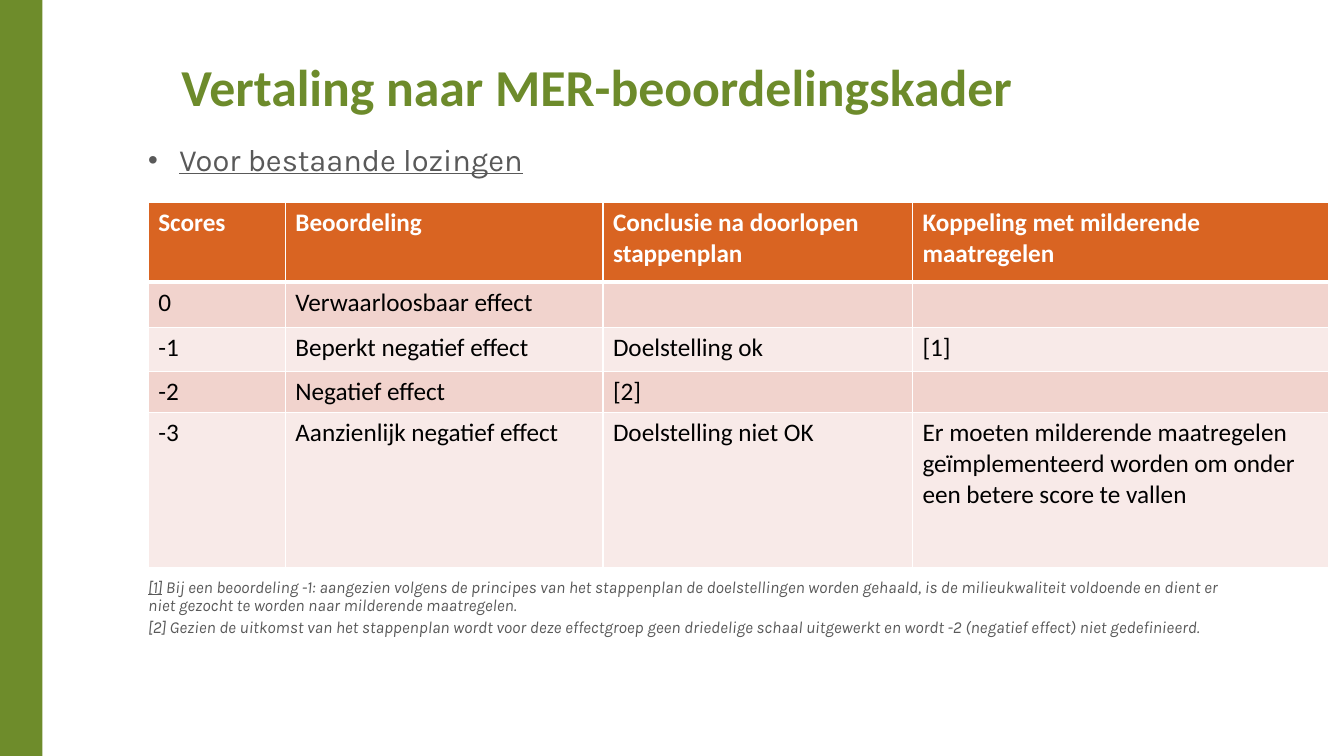
from dataclasses import dataclass

from lxml.etree import SubElement
from pptx import Presentation
from pptx.dml.color import RGBColor
from pptx.enum.shapes import MSO_SHAPE
from pptx.enum.text import MSO_ANCHOR, MSO_AUTO_SIZE, PP_ALIGN
from pptx.oxml import parse_xml
from pptx.oxml.ns import nsdecls, qn
from pptx.util import Inches, Pt


@dataclass(frozen=True)
class Theme:
    heading_font: str = "Calibri"
    body_font: str = "Karla"
    bar: str = "6E8C2B"
    title: str = "6D8B2B"
    text: str = "595959"
    header: str = "D96422"
    bands: tuple = ("F1D3CD", "F8EAE8")
    white: str = "FFFFFF"
    black: str = "000000"
    title_size: int = 37
    bullet_size: int = 22
    table_size: int = 18
    note_size: int = 12


THEME = Theme()

COLUMN_WIDTHS = (1.36, 3.15, 3.07, 4.13)
ROW_HEIGHTS = (0.79, 0.45, 0.44, 0.4, 1.54)
SCORE_ROWS = (
    ("Scores", "Beoordeling", "Conclusie na doorlopen stappenplan",
     "Koppeling met milderende maatregelen"),
    ("0", "Verwaarloosbaar effect", "", ""),
    ("-1", "Beperkt negatief effect", "Doelstelling ok", "[1]"),
    ("-2", "Negatief effect", "[2]", ""),
    ("-3", "Aanzienlijk negatief effect", "Doelstelling niet OK",
     "Er moeten milderende maatregelen geïmplementeerd worden om onder "
     "een betere score te vallen"),
)
NOTES = (
    ("[1]", " Bij een beoordeling -1: aangezien volgens de principes van het "
     "stappenplan de doelstellingen worden gehaald, is de milieukwaliteit "
     "voldoende en dient er niet gezocht te worden naar milderende maatregelen."),
    ("[2] Gezien de uitkomst van het stappenplan wordt voor deze effectgroep "
     "geen driedelige schaal uitgewerkt en wordt -2 (negatief effect) niet "
     "gedefinieerd.",),
)


def style_run(run, font_name, size, color, bold=False, italic=False, underline=False):
    font = run.font
    font.name, font.size = font_name, Pt(size)
    font.bold, font.italic, font.underline = bold, italic, underline
    font.color.rgb = RGBColor.from_string(color)


def place(shape, left, top, width, height):
    shape.left, shape.top = Inches(left), Inches(top)
    shape.width, shape.height = Inches(width), Inches(height)


def prepare_frame(shape, bottom_margin=0):
    frame = shape.text_frame
    frame.margin_left = frame.margin_top = frame.margin_right = 0
    frame.margin_bottom = Inches(bottom_margin)
    frame.vertical_anchor = MSO_ANCHOR.TOP
    frame.auto_size = MSO_AUTO_SIZE.NONE
    frame.word_wrap = True
    return frame


def set_bullet(paragraph, indent=0, character=None):
    """Give the paragraph a hanging bullet, or none without a character."""
    properties = paragraph._p.get_or_add_pPr()
    properties.set("marL", str(Inches(indent)))
    properties.set("indent", str(-Inches(indent)))
    if character:
        SubElement(properties, qn("a:buSzPct"), val="90000")
        SubElement(properties, qn("a:buFont"), typeface="Arial")
        SubElement(properties, qn("a:buChar"), char=character)
    else:
        SubElement(properties, qn("a:buNone"))


def set_borders(cell, widths):
    """Draw white borders; widths are points for left, right, top, bottom."""
    properties = cell._tc.get_or_add_tcPr()
    for index, (side, width) in enumerate(zip("LRTB", widths)):
        properties.insert(index, parse_xml(
            f'<a:ln{side} {nsdecls("a")} w="{Pt(width)}"><a:solidFill>'
            f'<a:srgbClr val="{THEME.white}"/></a:solidFill></a:ln{side}>'))


def add_side_bar(slide, left, top, width, height):
    bar = slide.shapes.add_shape(
        MSO_SHAPE.RECTANGLE, Inches(left), Inches(top), Inches(width), Inches(height))
    bar.shadow.inherit = False
    bar.fill.solid()
    bar.fill.fore_color.rgb = RGBColor.from_string(THEME.bar)
    bar.line.fill.background()


def fill_title(slide, left, top, width, height):
    title = slide.shapes.title
    place(title, left, top, width, height)
    frame = prepare_frame(title)
    frame.text = "Vertaling naar MER-beoordelingskader"
    paragraph = frame.paragraphs[0]
    paragraph.alignment = PP_ALIGN.LEFT
    paragraph.line_spacing = Pt(38)
    style_run(paragraph.runs[0], THEME.heading_font, THEME.title_size, THEME.title, bold=True)


def fill_body(slide, left, top, width, height):
    """Write the bullet above the table and the notes below it."""
    body = slide.placeholders[1]
    place(body, left, top, width, height)
    frame = prepare_frame(body, bottom_margin=0.05)
    frame.text = "Voor bestaande lozingen"
    bullet = frame.paragraphs[0]
    set_bullet(bullet, 0.31, "•")
    bullet.space_before = Pt(0)
    bullet.line_spacing = 0.9
    style_run(bullet.runs[0], THEME.body_font, THEME.bullet_size, THEME.text, underline=True)
    for parts, space_before in zip(NOTES, (286, 3)):
        note = frame.add_paragraph()
        set_bullet(note)
        note.line_spacing = 0.9
        note.space_before = Pt(space_before)
        for part in parts:
            run = note.add_run()
            run.text = part
            style_run(run, THEME.body_font, THEME.note_size, THEME.text,
                      italic=True, underline=part == "[1]")


def add_score_table(slide, left, top):
    table = slide.shapes.add_table(
        len(SCORE_ROWS), len(COLUMN_WIDTHS), Inches(left), Inches(top),
        Inches(sum(COLUMN_WIDTHS)), Inches(sum(ROW_HEIGHTS))).table
    for column, width in zip(table.columns, COLUMN_WIDTHS):
        column.width = Inches(width)
    for row_index, (row, height) in enumerate(zip(table.rows, ROW_HEIGHTS)):
        row.height = Inches(height)
        is_header = row_index == 0
        fill = THEME.header if is_header else THEME.bands[(row_index - 1) % 2]
        color = THEME.white if is_header else THEME.black
        borders = (1, 1, 3 if row_index == 1 else 1, 3 if is_header else 1)
        for cell, text in zip(row.cells, SCORE_ROWS[row_index]):
            cell.fill.solid()
            cell.fill.fore_color.rgb = RGBColor.from_string(fill)
            set_borders(cell, borders)
            if text:
                cell.text_frame.text = text
                style_run(cell.text_frame.paragraphs[0].runs[0], THEME.heading_font,
                          THEME.table_size, color, bold=is_header)


def main():
    presentation = Presentation()
    presentation.slide_width, presentation.slide_height = Inches(13.33), Inches(7.5)
    slide = presentation.slides.add_slide(presentation.slide_layouts[1])
    add_side_bar(slide, 0, 0, 0.42, 7.5)
    fill_title(slide, 1.8, 0.63, 10.81, 0.68)
    fill_body(slide, 1.47, 1.44, 10.81, 4.62)
    add_score_table(slide, 1.47, 2.01)
    presentation.save("out.pptx")


if __name__ == "__main__":
    main()
